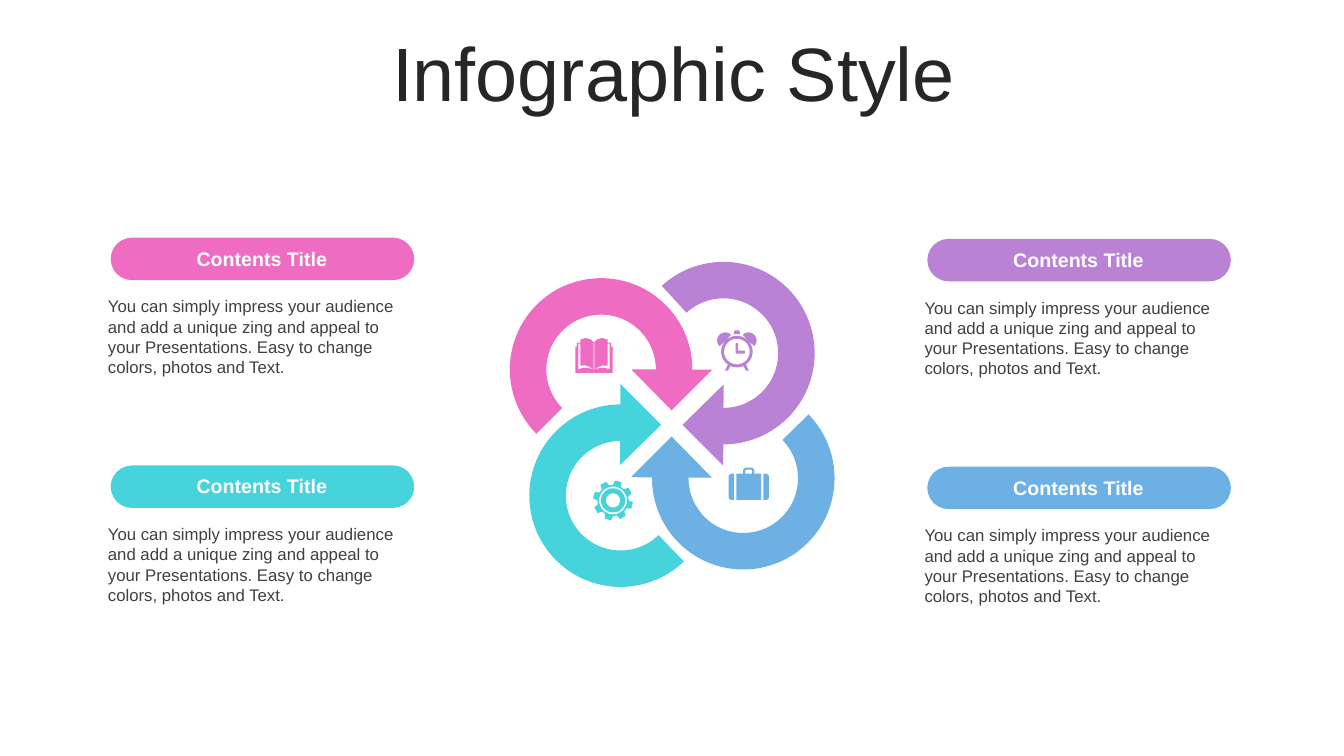
"""Build a slide with four interlocking arrows, icons and captioned cards."""
from math import cos, radians, sin
from pptx import Presentation
from pptx.dml.color import RGBColor
from pptx.enum.shapes import MSO_SHAPE
from pptx.enum.text import MSO_ANCHOR, PP_ALIGN
from pptx.util import Cm, Pt

COLORS = {"pink": "EE6CC1", "purple": "B982D5", "blue": "6DB0E4", "teal": "47D3DC",
          "title": "262626", "body": "404040", "white": "FFFFFF"}
TITLE = "Infographic Style"
HEAD = "Contents Title"
BODY = ("You can simply impress your audience and add a unique zing and appeal to "
        "your Presentations. Easy to change colors, photos and Text.")
CARDS = [("purple", 23.37, 6.02), ("blue", 23.37, 11.76),
         ("pink", 2.79, 5.99), ("teal", 2.79, 11.73)]
PETALS = [("pink", (12.85, 7.01), (16.2, 8.59), 81.13),
          ("purple", (15.93, 6.6), (17.5, 9.98), 82.53),
          ("blue", (16.43, 9.75), (16.2, 11.3), 81.4),
          ("teal", (13.34, 10.19), (14.91, 9.98), 81.65)]
RING, TIP = 4.6, 1.45
UNIT = 0.0254


def arc(x, y, r, start=0, end=360):
    return [(x + r * cos(radians(a)), y + r * sin(radians(a)))
            for a in range(start, end + 1, 5)]


def flip(points):
    return [(-x, y) for x, y in points]


def clock():
    ear = arc(-11.5, -11, 8, 135, 315)
    leg = [(9, 13), (12, 19), (9, 19), (6.5, 14.5)]
    hands = [(-1.3, -8), (0, -8.7), (1.3, -8), (1.3, -1), (7.5, -1), (8.4, 0.5),
             (7.5, 2), (-0.5, 2), (-1.3, 1.2)]
    cap = [(-3, -17), (-3, -19.5), (-1.8, -21), (1.8, -21), (3, -19.5), (3, -17), (0, -17.5)]
    return [arc(0, 0, 15.6), arc(0, 0, 12.7), hands, cap, ear, flip(ear), leg, flip(leg)]


def case():
    side = [(-14.5, -10), (-18, -10), (-20, -8), (-20, 14), (-18, 16), (-14.5, 16)]
    trunk = [(-12.3, -10), (-5.5, -10), (-5.5, -14), (-3.5, -16), (3.5, -16), (5.5, -14),
             (5.5, -10), (12.3, -10), (12.3, 16), (-12.3, 16)]
    grip = [(-3.5, -10), (-3.5, -13), (-2.5, -14), (2.5, -14), (3.5, -13), (3.5, -10)]
    return [side, flip(side), trunk, grip]


def gear():
    teeth = []
    for mid in range(15, 375, 45):
        for turn, r in ((-15.5, 15.5), (-9.5, 19.8), (9.5, 19.8), (15.5, 15.5)):
            a = radians(mid + turn)
            teeth.append((r * cos(a), r * sin(a)))
    return [teeth, arc(0, 0, 13.8), arc(0, 0, 12), arc(0, 0, 7)]


def book():
    half = [(-18.5, 17.5), (-18.5, -8.5), (-17, -8.5), (-17, -12.5), (-13.5, -12.5),
            (-13.5, -15.5), (-8, -17), (-3, -15.5), (0, -12.5)]
    gap = [(-13.5, -11.5), (-15.5, -11.5), (-15.5, 14), (-10, 12.5), (-5, 12.8),
           (-0.4, 14.8), (-4, 11.8), (-9, 10.2), (-13.5, 10.5)]
    spine = [(-0.4, -12), (0.4, -12), (0.4, 14.5), (-0.4, 14.5)]
    return [half + flip(half[-2::-1]), gap, flip(gap), spine]


ICONS = [("purple", 18.57, 8.86, clock()), ("blue", 18.87, 12.19, case()),
         ("teal", 15.45, 12.61, gear()), ("pink", 14.97, 8.95, book())]


def paint(shape, tone):
    shape.shadow.inherit = False
    shape.fill.solid()
    shape.fill.fore_color.rgb = RGBColor.from_string(COLORS[tone])
    shape.line.fill.background()


def preset(shapes, kind, x, y, w, h, tone, adj, turn=0):
    shape = shapes.add_shape(kind, Cm(x), Cm(y), Cm(w), Cm(h))
    for i, val in enumerate(adj):
        shape.adjustments[i] = val
    shape.rotation = turn % 360
    paint(shape, tone)


def write(shapes, x, y, w, h, text, size, tone, align=PP_ALIGN.CENTER, bold=False):
    frame = shapes.add_textbox(Cm(x), Cm(y), Cm(w), Cm(h)).text_frame
    frame.word_wrap = True
    para = frame.paragraphs[0]
    para.alignment = align
    run = para.add_run()
    run.text = text
    run.font.name, run.font.size, run.font.bold = "Arial", Pt(size), bold
    run.font.color.rgb = RGBColor.from_string(COLORS[tone])
    return frame


def draw(shapes, tone, x, y, loops):
    spots = [[(Cm(x + px * UNIT), Cm(y + py * UNIT)) for px, py in loop] for loop in loops]
    pen = shapes.build_freeform(*spots[0][0])
    for i, loop in enumerate(spots):
        if i:
            pen.move_to(*loop[0])
        pen.add_line_segments(loop[1:], close=True)
    paint(pen.convert_to_shape(), tone)


def main():
    deck = Presentation()
    deck.slide_width, deck.slide_height = Cm(33.87), Cm(19.05)
    shapes = deck.slides.add_slide(deck.slide_layouts[6]).shapes
    title = write(shapes, 0.9, 0.93, 32.15, 2, TITLE, 54, "title")
    title.vertical_anchor = MSO_ANCHOR.MIDDLE
    title.paragraphs[0].line_spacing = 0.9
    for i, (tone, ring, tip, start) in enumerate(PETALS):
        preset(shapes, MSO_SHAPE.BLOCK_ARC, *ring, RING, RING, tone,
               (start, 0.61, 0.2), 90 * i)
        preset(shapes, MSO_SHAPE.ISOSCELES_TRIANGLE, *tip, TIP, TIP, tone,
               (0.01,), 315 + 90 * i)
    for icon in ICONS:
        draw(shapes, *icon)
    for tone, x, y in CARDS:
        preset(shapes, MSO_SHAPE.ROUNDED_RECTANGLE, x, y, 7.65, 1.07, tone, (0.5,))
        write(shapes, x - 0.32, y + 1.35, 8.28, 2.31, BODY, 12, "body", PP_ALIGN.LEFT)
        write(shapes, x + 0.23, y + 0.1, 7.16, 0.86, HEAD, 14, "white", bold=True)
    deck.save("out.pptx")


if __name__ == "__main__":
    main()
